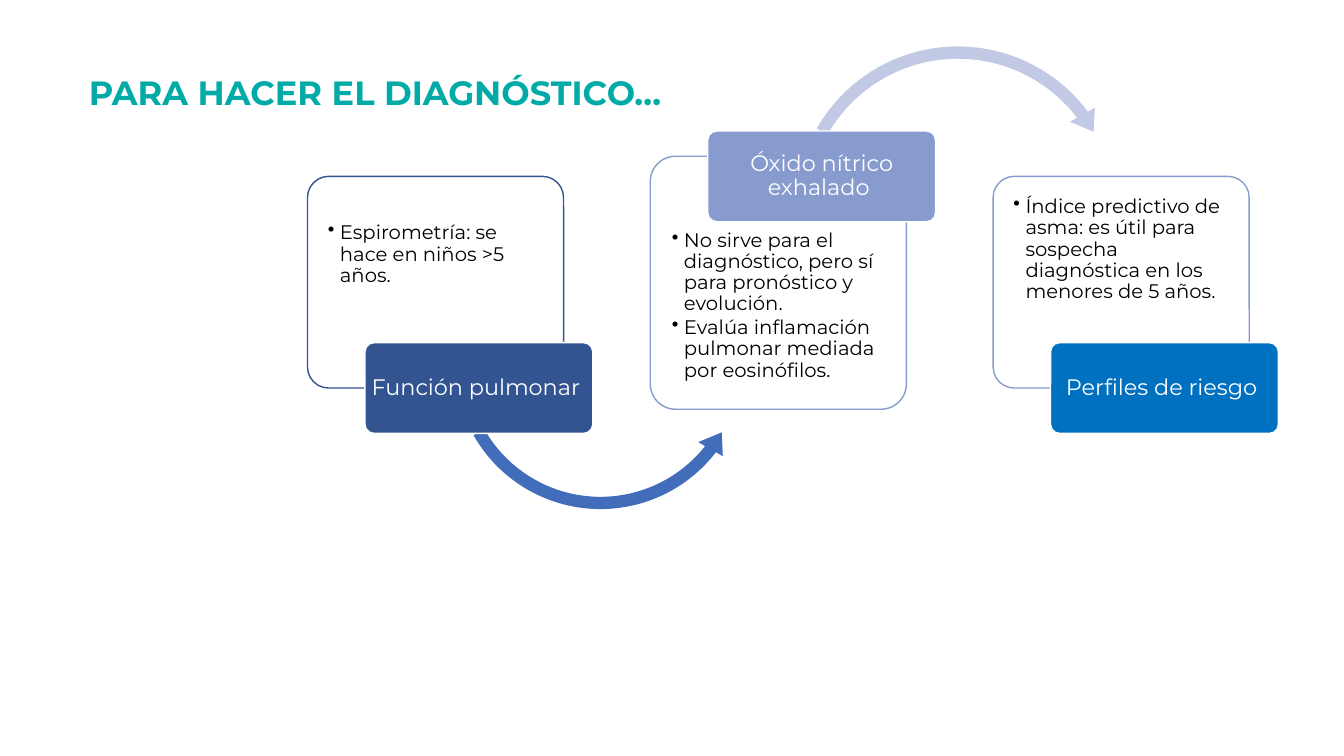
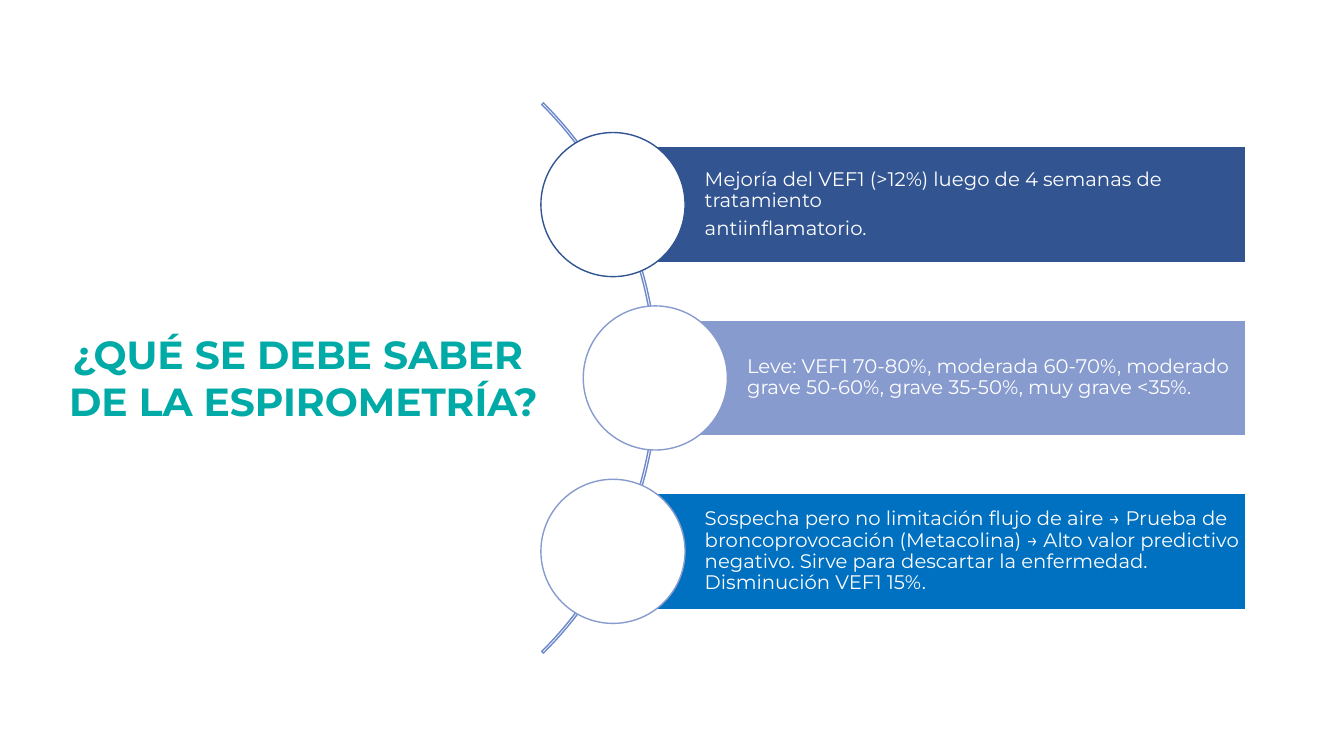
from lxml.etree import SubElement
from pptx import Presentation
from pptx.dml.color import RGBColor
from pptx.enum.shapes import MSO_SHAPE
from pptx.enum.text import MSO_ANCHOR, PP_ALIGN
from pptx.oxml.ns import qn
from pptx.util import Inches, Pt

TEAL, NAVY, LILAC, BLUE = "00AAA7", "325491", "879BCE", "0070C0"
WHITE, BLACK = "FFFFFF", "000000"


def colour(value):
    return RGBColor.from_string(value)


def set_values(target, values):
    for name, value in values.items():
        setattr(target, name, value)


class Deck:
    font = "Montserrat"
    body = {"line_spacing": 0.9, "space_after": Pt(5)}
    bullet = {"line_spacing": 0.9, "space_after": Pt(2)}
    centred = {"alignment": PP_ALIGN.CENTER}

    def __init__(self):
        self.deck = Presentation()
        set_values(self.deck, {"slide_width": Inches(13.33), "slide_height": Inches(7.5)})
        self.page = None

    def new_page(self):
        self.page = self.deck.slides.add_slide(self.deck.slide_layouts[6])

    def add_text(self, box, lines, size, hue, layout, insets, anchor=MSO_ANCHOR.TOP,
                 bold=False, bulleted=False):
        frame = box.text_frame
        sides = ("margin_left", "margin_top", "margin_right", "margin_bottom")
        set_values(frame, dict(zip(sides, map(Inches, insets))))
        set_values(frame, {"word_wrap": True, "vertical_anchor": anchor})
        for index, line in enumerate(lines):
            para = frame.paragraphs[0] if index == 0 else frame.add_paragraph()
            if bulleted:
                self.add_bullet(para)
            set_values(para, {"alignment": PP_ALIGN.LEFT, **layout})
            span = para.add_run()
            span.text = line
            set_values(span.font, {"name": self.font, "size": Pt(size), "bold": bold})
            span.font.color.rgb = colour(hue)

    def add_bullet(self, para):
        properties = para._p.get_or_add_pPr()
        properties.set("marL", str(Inches(0.12)))
        properties.set("indent", str(-Inches(0.12)))
        SubElement(properties, qn("a:buChar")).set("char", "•")

    def title(self, lines, left, top, width, height, size):
        box = self.page.shapes.add_textbox(*map(Inches, (left, top, width, height)))
        self.add_text(box, lines, size, TEAL, self.centred, (0.1, 0.05, 0.1, 0.05), bold=True)

    def shape(self, kind, left, top, width, height, fill=None, line=None, adjustments=()):
        box = self.page.shapes.add_shape(kind, *map(Inches, (left, top, width, height)))
        box.shadow.inherit = False
        for index, value in enumerate(adjustments):
            box.adjustments[index] = value
        if fill:
            box.fill.solid()
            box.fill.fore_color.rgb = colour(fill)
        else:
            box.fill.background()
        if line:
            box.line.color.rgb = colour(line)
            box.line.width = Pt(1)
        else:
            box.line.fill.background()
        return box

    def card(self, lines, left, top, height, line, text_top):
        box = self.shape(MSO_SHAPE.ROUNDED_RECTANGLE, left, top, 2.54, height,
                         WHITE, line, [0.1])
        self.add_text(box, lines, 14, BLACK, self.bullet, (0.14, text_top, 0.14, 0.14),
                      bulleted=True)

    def caption(self, label, left, top, fill):
        box = self.shape(MSO_SHAPE.ROUNDED_RECTANGLE, left, top, 2.26, 0.9,
                         fill, WHITE, [0.1])
        self.add_text(box, [label], 16, WHITE, {**self.body, **self.centred},
                      (0.03, 0.02, 0.03, 0.02), MSO_ANCHOR.MIDDLE)

    def bar(self, lines, centre_x, centre_y, fill, ring):
        right, height, diameter = 12.36, 1.15, 1.43
        box = self.shape(MSO_SHAPE.RECTANGLE, centre_x, centre_y - height / 2,
                         right - centre_x, height, fill, WHITE)
        self.add_text(box, lines, 14, WHITE, self.body, (0.91, 0.04, 0.04, 0.04),
                      MSO_ANCHOR.MIDDLE)
        self.shape(MSO_SHAPE.OVAL, centre_x - diameter / 2, centre_y - diameter / 2,
                   diameter, diameter, WHITE, ring)


def diagnosis_page(deck):
    deck.new_page()
    deck.title(["PARA HACER EL DIAGNÓSTICO…"], 0.22, 0.66, 7, 0.5, 24)
    steps = [
        ("Función pulmonar ", ["Espirometría: se hace en niños >5 años."],
         1.75, 2.1, 0.4, 3.4, NAVY, NAVY),
        ("Óxido nítrico exhalado ",
         ["No sirve para el diagnóstico, pero sí para pronóstico y evolución.",
          "Evalúa inflamación pulmonar mediada por eosinófilos."],
         1.55, 2.51, 0.66, 1.3, LILAC, LILAC),
        ("Perfiles de riesgo ",
         ["Índice predictivo de asma: es útil para sospecha diagnóstica en los menores de 5 años."],
         1.75, 2.1, 0.14, 3.4, BLUE, LILAC),
    ]
    arrows = [
        (MSO_SHAPE.LEFT_CIRCULAR_ARROW, 4.43, 2.08, 3.05, "416DBB",
         [0.04, 4.978, 22.754, 90.266, 0.046]),
        (MSO_SHAPE.CIRCULAR_ARROW, 7.81, 0.38, 3.38, "C1C9E4",
         [0.036, 4.458, 193.805, 125.774, 0.042]),
    ]
    for index, (label, lines, top, height, text_top, label_top, fill, line) in enumerate(steps):
        left = 3.05 + 3.4 * index
        deck.card(lines, left, top, height, line, text_top)
        if index < len(arrows):
            kind, arrow_left, arrow_top, side, hue, adjustments = arrows[index]
            deck.shape(kind, arrow_left, arrow_top, side, side, hue, adjustments=adjustments)
        deck.caption(label, left + 0.57, label_top, fill)


def spirometry_page(deck):
    deck.new_page()
    deck.title(["¿QUÉ SE DEBE SABER ", "DE LA ESPIROMETRÍA?"], 0.11, 3.23, 5.8, 1.04, 28)
    deck.shape(MSO_SHAPE.BLOCK_ARC, -1.2, -0.11, 7.72, 7.72, line="6D89CB",
               adjustments=[189, 27, 0.003])
    facts = [
        (["Mejoría del VEF1 (>12%) luego de 4 semanas de tratamiento", "antiinflamatorio."],
         6.08, NAVY, NAVY),
        (["Leve: VEF1 70-80%, moderada 60-70%, moderado grave 50-60%, grave 35-50%, "
          "muy grave <35%."], 6.5, LILAC, LILAC),
        (["Sospecha pero no limitación flujo de aire → Prueba de broncoprovocación "
          "(Metacolina) → Alto valor predictivo negativo. Sirve para descartar la "
          "enfermedad. Disminución VEF1 15%."], 6.08, BLUE, LILAC),
    ]
    for index, (lines, centre_x, fill, ring) in enumerate(facts):
        deck.bar(lines, centre_x, 3.75 + 1.72 * (index - 1), fill, ring)


def main():
    deck = Deck()
    diagnosis_page(deck)
    spirometry_page(deck)
    deck.deck.save("out.pptx")


if __name__ == "__main__":
    main()
